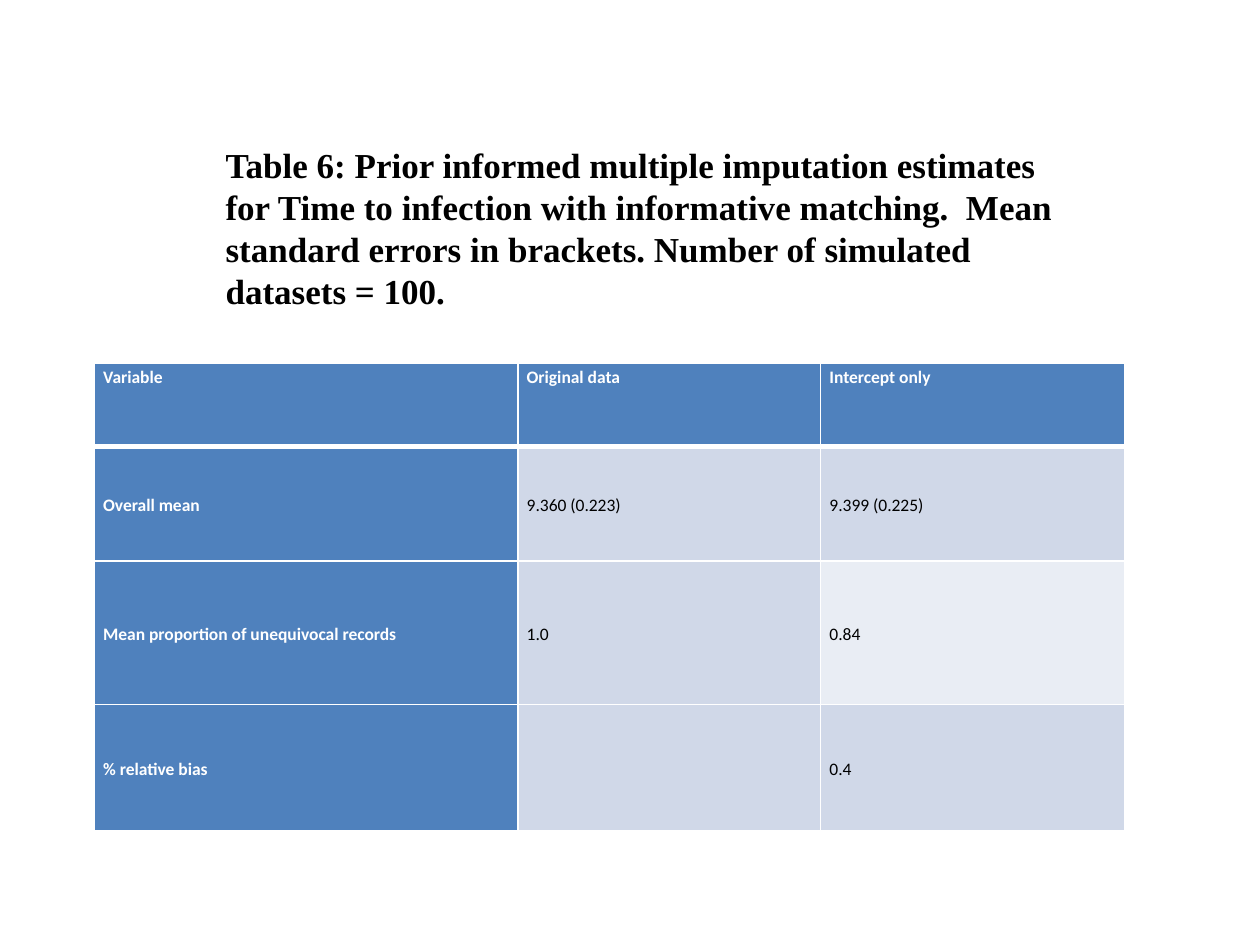
from lxml import etree
from pptx import Presentation
from pptx.dml.color import RGBColor
from pptx.enum.text import MSO_ANCHOR, MSO_AUTO_SIZE, PP_ALIGN
from pptx.oxml.ns import qn
from pptx.util import Pt

TOP, MIDDLE = MSO_ANCHOR.TOP, MSO_ANCHOR.MIDDLE
LEFT, JUSTIFY = PP_ALIGN.LEFT, PP_ALIGN.JUSTIFY
NO_AUTOFIT = MSO_AUTO_SIZE.NONE

WHITE = RGBColor(0xFF, 0xFF, 0xFF)
BLACK = RGBColor(0x00, 0x00, 0x00)
BLUE = RGBColor(0x4F, 0x81, 0xBD)
BAND = RGBColor(0xD0, 0xD8, 0xE8)
PALE = RGBColor(0xE9, 0xED, 0xF4)

TITLE = (
    "Table 6: Prior informed multiple imputation estimates for Time to "
    "infection with informative matching.  Mean standard errors in brackets. "
    "Number of simulated datasets = 100."
)
ROWS = [
    ["Variable", "Original data", "Intercept only"],
    ["Overall mean", "9.360 (0.223)", "9.399 (0.225)"],
    ["Mean proportion of unequivocal records", "1.0", "0.84"],
    ["% relative bias", "", "0.4"],
]
COL_WIDTHS = [242, 173, 174]
ROW_HEIGHTS = [47.5, 65.5, 82, 72]


def set_text(tf, text, font="Calibri", size=10, color=BLACK, bold=False,
             align=LEFT, spacing=1.0, after=0):
    p = tf.paragraphs[0]
    p.alignment = align
    p.line_spacing = spacing
    p.space_before = Pt(0)
    p.space_after = Pt(after)
    if not text:
        return
    r = p.add_run()
    r.text = text
    r.font.name = font
    r.font.size = Pt(size)
    r.font.bold = bold
    r.font.color.rgb = color


def set_borders(cell, **widths):
    tc_pr = cell._tc.get_or_add_tcPr()
    for side in "LRTB":
        ln = etree.SubElement(tc_pr, qn(f"a:ln{side}"), w=str(Pt(widths.get(side, 1))))
        fill = etree.SubElement(ln, qn("a:solidFill"))
        etree.SubElement(fill, qn("a:srgbClr"), val=str(WHITE))


def add_title(s):
    sp = s.shapes.title
    sp.left, sp.top, sp.width, sp.height = Pt(121.7), Pt(78.5), Pt(498), Pt(104)
    tf = sp.text_frame
    tf.word_wrap = True
    tf.auto_size = NO_AUTOFIT
    tf.vertical_anchor = TOP
    set_text(tf, TITLE, font="Times New Roman", size=20, bold=True)


def format_cell(cell, text, row, col):
    header = row == 0
    label = header or col == 0
    set_borders(cell, T=3 if row == 1 else 1, B=3 if header else 1)
    cell.fill.solid()
    if label:
        cell.fill.fore_color.rgb = BLUE
    else:
        cell.fill.fore_color.rgb = PALE if (row, col) == (2, 2) else BAND
    cell.margin_left = cell.margin_right = Pt(5)
    cell.margin_top = cell.margin_bottom = Pt(0)
    cell.vertical_anchor = TOP if header else MIDDLE
    set_text(cell.text_frame, text, color=WHITE if label else BLACK, bold=label,
             align=JUSTIFY, spacing=1.15, after=10)


def add_estimates_table(s):
    frame = s.shapes.add_table(len(ROWS), len(COL_WIDTHS), Pt(54), Pt(207.7),
                               Pt(sum(COL_WIDTHS)), Pt(sum(ROW_HEIGHTS)))
    table = frame.table
    table.first_col = True
    for column, width in zip(table.columns, COL_WIDTHS):
        column.width = Pt(width)
    for i, (values, height) in enumerate(zip(ROWS, ROW_HEIGHTS)):
        table.rows[i].height = Pt(height)
        for j, text in enumerate(values):
            format_cell(table.cell(i, j), text, i, j)


def main():
    prs = Presentation()
    prs.slide_width, prs.slide_height = Pt(720), Pt(540)
    s = prs.slides.add_slide(prs.slide_layouts[5])
    add_estimates_table(s)
    add_title(s)
    prs.save("out.pptx")


if __name__ == "__main__":
    main()
